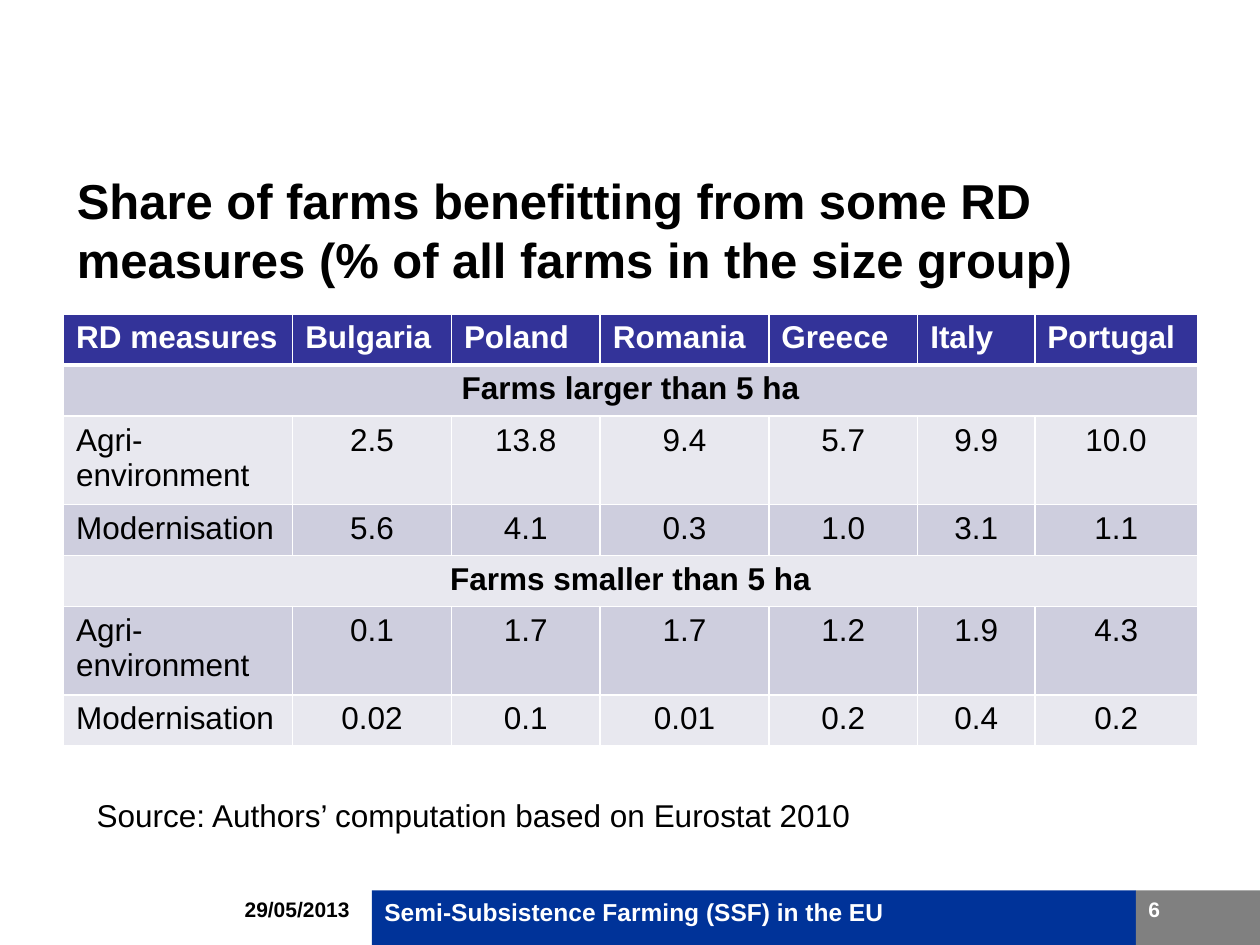
from dataclasses import dataclass

from lxml import etree
from pptx import Presentation
from pptx.dml.color import RGBColor
from pptx.enum.shapes import MSO_SHAPE
from pptx.enum.text import MSO_ANCHOR, PP_ALIGN
from pptx.oxml.ns import qn
from pptx.util import Cm, Pt

RECTANGLE = MSO_SHAPE.RECTANGLE
TOP, MIDDLE = MSO_ANCHOR.TOP, MSO_ANCHOR.MIDDLE
LEFT, CENTER, RIGHT = PP_ALIGN.LEFT, PP_ALIGN.CENTER, PP_ALIGN.RIGHT


@dataclass(frozen=True)
class Theme:
    font: str = "Arial"
    black: str = "000000"
    white: str = "FFFFFF"
    header: str = "333399"
    dark_band: str = "CECEDE"
    light_band: str = "E8E8EF"
    footer_blue: str = "003399"
    footer_grey: str = "808080"
    title_size: int = 28
    body_size: int = 18
    footer_size: int = 14
    small_size: int = 12
    thin_line: int = 1
    thick_line: int = 3


class SlideBuilder:
    def __init__(self, slide, theme):
        self.slide = slide
        self.theme = theme

    def set_text(self, text_frame, text, size, color, bold=False, align=LEFT):
        paragraph = text_frame.paragraphs[0]
        paragraph.text = text
        paragraph.alignment = align
        font = paragraph.font
        font.name = self.theme.font
        font.size = Pt(size)
        font.bold = bold
        font.color.rgb = RGBColor.from_string(color)

    def add_text(self, box, text, size, bold=False, align=LEFT, anchor=TOP):
        shape = self.slide.shapes.add_textbox(*map(Cm, box))
        shape.text_frame.word_wrap = True
        shape.text_frame.vertical_anchor = anchor
        self.set_text(shape.text_frame, text, size, self.theme.black, bold, align)

    def add_bar(self, box, fill, text, size):
        shape = self.slide.shapes.add_shape(RECTANGLE, *map(Cm, box))
        shape.shadow.inherit = False
        shape.fill.solid()
        shape.fill.fore_color.rgb = RGBColor.from_string(fill)
        shape.line.fill.background()
        shape.text_frame.vertical_anchor = TOP
        self.set_text(shape.text_frame, text, size, self.theme.white, bold=True)

    def add_borders(self, cell, top, bottom):
        properties = cell._tc.get_or_add_tcPr()
        thin = self.theme.thin_line
        widths = {"lnL": thin, "lnR": thin, "lnT": top, "lnB": bottom}
        for position, (side, width) in enumerate(widths.items()):
            line = etree.Element(qn(f"a:{side}"), w=str(Pt(width)))
            fill = etree.SubElement(line, qn("a:solidFill"))
            etree.SubElement(fill, qn("a:srgbClr"), val=self.theme.white)
            properties.insert(position, line)

    def style_cell(self, cell, row_index):
        theme = self.theme
        bands = (theme.light_band, theme.dark_band)
        fill = theme.header if row_index == 0 else bands[row_index % 2]
        cell.fill.solid()
        cell.fill.fore_color.rgb = RGBColor.from_string(fill)
        top = theme.thick_line if row_index == 1 else theme.thin_line
        bottom = theme.thick_line if row_index == 0 else theme.thin_line
        self.add_borders(cell, top, bottom)

    def add_table(self, left, top, widths, row_height, rows):
        theme = self.theme
        size = Cm(sum(widths)), Cm(row_height * len(rows))
        frame = self.slide.shapes.add_table(
            len(rows), len(widths), Cm(left), Cm(top), *size)
        table = frame.table
        for column, width in zip(table.columns, widths):
            column.width = Cm(width)
        for row_index, values in enumerate(rows):
            table.rows[row_index].height = Cm(row_height)
            is_header = row_index == 0
            is_group = len(values) == 1
            for column_index in range(len(widths)):
                self.style_cell(table.cell(row_index, column_index), row_index)
            if is_group:
                last_cell = table.cell(row_index, len(widths) - 1)
                table.cell(row_index, 0).merge(last_cell)
            for column_index, value in enumerate(values):
                centred = is_group or (column_index > 0 and not is_header)
                self.set_text(
                    table.cell(row_index, column_index).text_frame,
                    value,
                    theme.body_size,
                    theme.white if is_header else theme.black,
                    bold=is_header or is_group,
                    align=CENTER if centred else LEFT,
                )


def main():
    presentation = Presentation()
    presentation.slide_width = Cm(25.4)
    presentation.slide_height = Cm(19.05)
    slide = presentation.slides.add_slide(presentation.slide_layouts[6])
    theme = Theme()
    builder = SlideBuilder(slide, theme)

    builder.add_text(
        (1.3, 3.33, 22.86, 2.59),
        "Share of farms benefitting from some RD measures "
        "(% of all farms in the size group)",
        theme.title_size, bold=True, anchor=MIDDLE)

    rows = [
        ["RD measures", "Bulgaria", "Poland", "Romania", "Greece", "Italy", "Portugal"],
        ["Farms larger than 5 ha"],
        ["Agri-environment", "2.5", "13.8", "9.4", "5.7", "9.9", "10.0"],
        ["Modernisation", "5.6", "4.1", "0.3", "1.0", "3.1", "1.1"],
        ["Farms smaller than 5 ha"],
        ["Agri-environment", "0.1", "1.7", "1.7", "1.2", "1.9", "4.3"],
        ["Modernisation", "0.02", "0.1", "0.01", "0.2", "0.4", "0.2"],
    ]
    column_widths = [4.62, 3.2, 3, 3.4, 3, 2.36, 3.28]
    builder.add_table(1.28, 6.33, column_widths, 1.03, rows)

    footer_top, footer_height = 17.95, 1.1
    builder.add_bar((7.5, footer_top, 15.4, footer_height), theme.footer_blue,
                    "Semi-Subsistence Farming (SSF) in the EU", theme.footer_size)
    builder.add_bar((22.9, footer_top, 2.5, footer_height), theme.footer_grey,
                    "6", theme.small_size)
    builder.add_text((1.7, 15.93, 19, 1.03),
                     "Source: Authors’ computation based on Eurostat 2010",
                     theme.body_size)
    builder.add_text((4.5, footer_top, 2.8, footer_height), "29/05/2013",
                     theme.small_size, bold=True, align=RIGHT)
    presentation.save("out.pptx")


if __name__ == "__main__":
    main()
